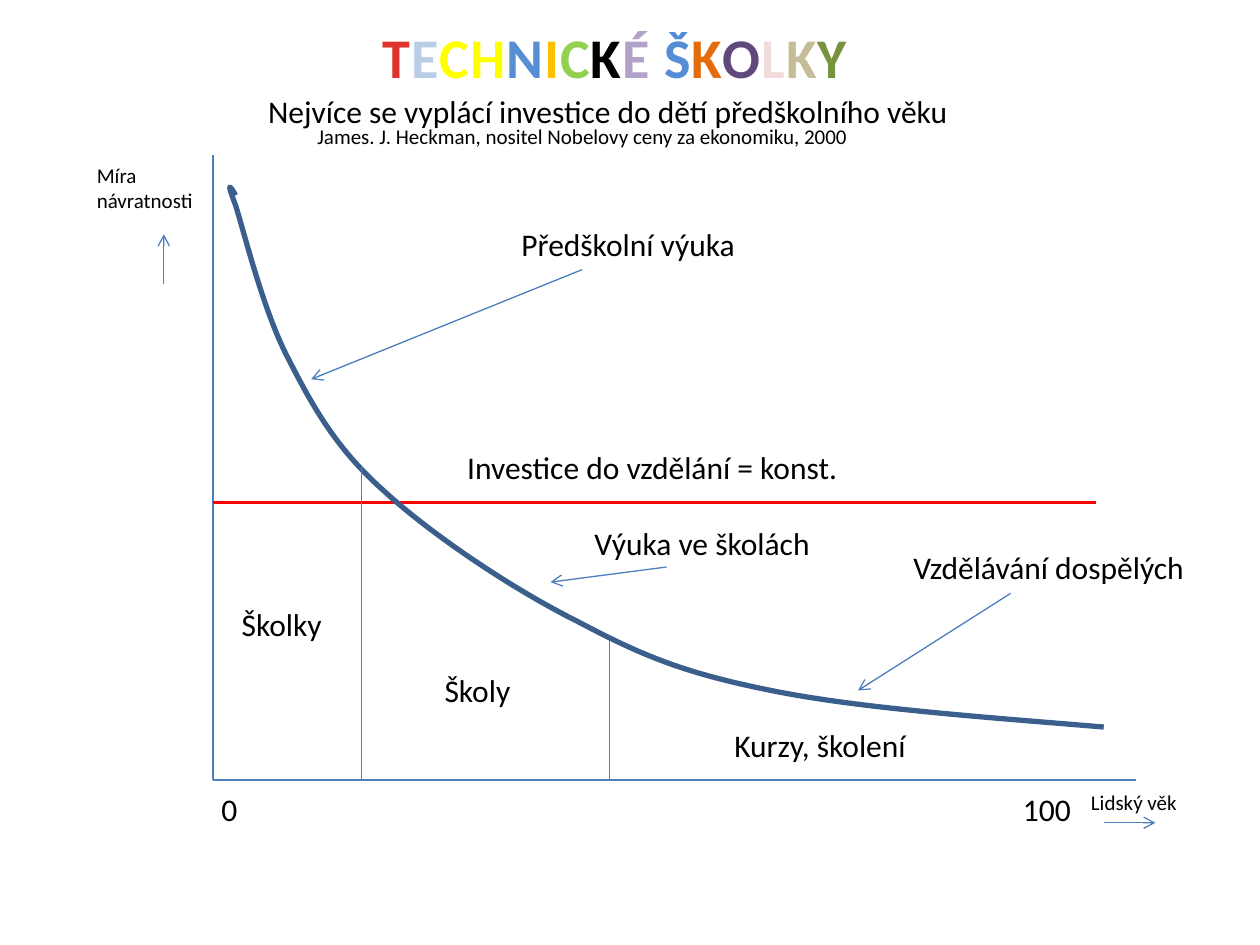
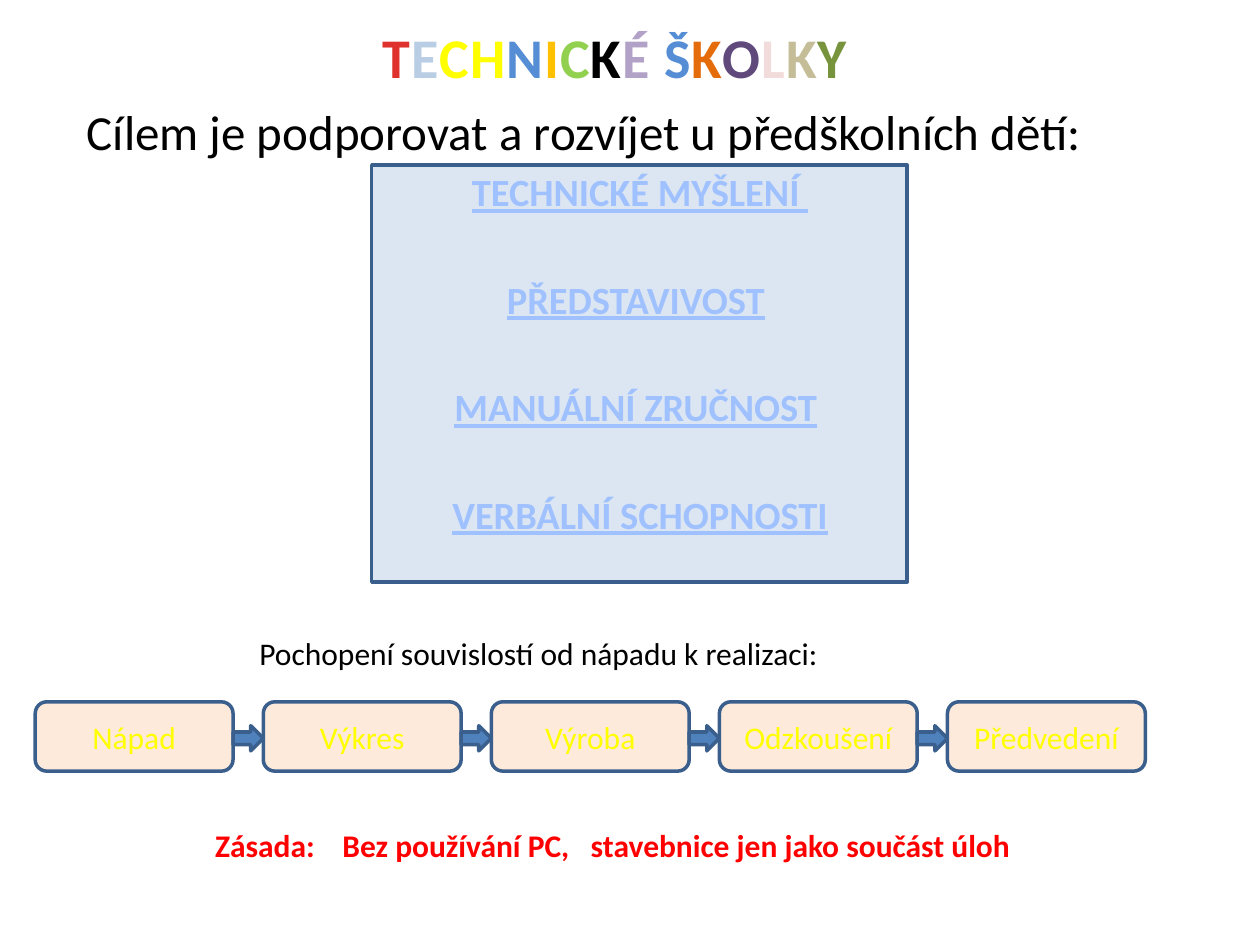
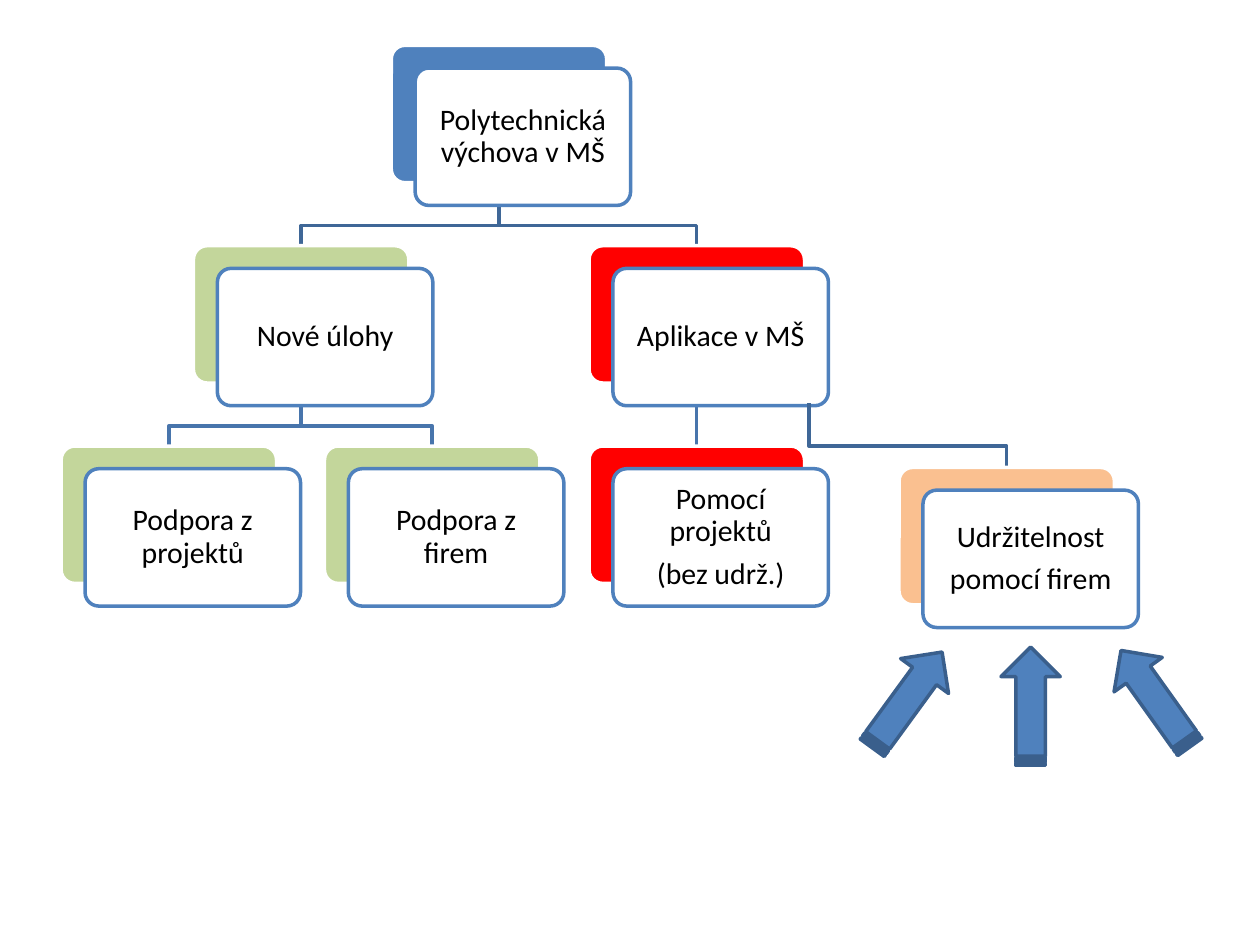
"""Builds three slides on technical kindergartens: return curve, goals and structure."""
from dataclasses import dataclass

from lxml.etree import SubElement
from pptx import Presentation
from pptx.dml.color import RGBColor
from pptx.enum.shapes import MSO_CONNECTOR, MSO_SHAPE
from pptx.enum.text import MSO_ANCHOR, MSO_AUTO_SIZE, PP_ALIGN
from pptx.oxml.ns import qn
from pptx.util import Inches, Pt


@dataclass(frozen=True)
class Theme:
    font: str = "Calibri"
    title_size: int = 32
    lead_size: int = 28
    goal_size: int = 22
    body_size: int = 18
    node_size: int = 17
    small_size: int = 12
    black: str = "000000"
    white: str = "FFFFFF"
    red: str = "FF0000"
    yellow: str = "FFFF00"
    blue: str = "4F81BD"
    dark_blue: str = "3A5F8C"
    thin_blue: str = "4B7EBC"
    link_upper: str = "3F6797"
    link_lower: str = "4875AC"
    panel: str = "DCE6F2"
    goal: str = "A0C1FF"
    step: str = "FDEADA"
    green: str = "C3D69B"
    orange: str = "FAC090"
    thin: float = 0.75
    thick: float = 2
    curve: float = 3


TITLE_RUNS = [
    ("T", "E0322D"), ("E", "B9CDE5"), ("CH", "FFFF00"), ("N", "558ED5"),
    ("I", "FFC000"), ("C", "92D050"), ("K", "000000"), ("É ", "B3A2C7"),
    ("Š", "558ED5"), ("K", "E46C0A"), ("O", "604A7B"), ("L", "F2DCDB"),
    ("K", "C4BD97"), ("Y", "77933C"),
]


class Deck:
    def __init__(self, theme):
        self.t = theme
        self.prs = Presentation()
        self.prs.slide_width = Inches(10)
        self.prs.slide_height = Inches(7.5)
        self.s = None

    def add_slide(self, titled=True):
        self.s = self.prs.slides.add_slide(self.prs.slide_layouts[5 if titled else 6])
        if titled:
            self.title()

    def title(self):
        sp = self.s.shapes.title
        sp.left, sp.top, sp.width, sp.height = map(Inches, (1.34, 0.13, 7.08, 0.64))
        tf = sp.text_frame
        tf.auto_size = MSO_AUTO_SIZE.NONE
        tf.vertical_anchor = MSO_ANCHOR.TOP
        p = tf.paragraphs[0]
        p.alignment = PP_ALIGN.CENTER
        for text, color in TITLE_RUNS:
            r = self.run(p, text, self.t.title_size, color, bold=True)
            r.font._element.set("spc", "50")

    def run(self, p, text, size, color=None, bold=False, underline=False):
        r = p.add_run()
        r.text = text
        f = r.font
        f.name, f.size, f.bold, f.underline = self.t.font, Pt(size), bold, underline
        f.color.rgb = RGBColor.from_string(color or self.t.black)
        return r

    def paragraph(self, tf, first):
        return tf.paragraphs[0] if first else tf.add_paragraph()

    def text(self, x, y, w, h, lines, size=None, color=None, bold=False, wrap=False):
        tf = self.s.shapes.add_textbox(*map(Inches, (x, y, w, h))).text_frame
        tf.word_wrap = wrap
        for i, line in enumerate(lines):
            p = self.paragraph(tf, i == 0)
            self.run(p, line, size or self.t.body_size, color, bold)
        return tf

    def tabs(self, p, stops):
        tab_list = SubElement(p._p.get_or_add_pPr(), qn("a:tabLst"))
        for stop in stops:
            SubElement(tab_list, qn("a:tab"), pos=str(Inches(stop)), algn="l")

    def shape(self, kind, x, y, w, h, fill, line, adj=None, rotation=0):
        sp = self.s.shapes.add_shape(kind, *map(Inches, (x, y, w, h)))
        sp.shadow.inherit = False
        sp.rotation = rotation
        sp.fill.solid()
        sp.fill.fore_color.rgb = RGBColor.from_string(fill)
        if adj:
            sp.adjustments[0] = adj
        self.stroke(sp, line, self.t.thick)
        return sp

    def stroke(self, sp, color, width):
        sp.line.color.rgb = RGBColor.from_string(color)
        sp.line.width = Pt(width)

    def label(self, sp, lines, size, color, spacing=None, after=None):
        tf = sp.text_frame
        tf.word_wrap = True
        tf.vertical_anchor = MSO_ANCHOR.MIDDLE
        for i, line in enumerate(lines):
            p = self.paragraph(tf, i == 0)
            p.alignment = PP_ALIGN.CENTER
            p.line_spacing = spacing
            p.space_after = after
            self.run(p, line, size, color)
        return tf

    def line(self, x1, y1, x2, y2, color=None, width=None, arrow=False):
        cn = self.s.shapes.add_connector(
            MSO_CONNECTOR.STRAIGHT, *map(Inches, (x1, y1, x2, y2)))
        self.stroke(cn, color or self.t.thin_blue, width or self.t.thin)
        if arrow:
            SubElement(cn.line._get_or_add_ln(), qn("a:tailEnd"), type="arrow")
        SubElement(cn._element.spPr, qn("a:effectLst"))

    def polyline(self, points, color, width):
        start, *rest = [(Inches(x), Inches(y)) for x, y in points]
        fb = self.s.shapes.build_freeform(*start)
        fb.add_line_segments(rest, close=False)
        sp = fb.convert_to_shape()
        sp.shadow.inherit = False
        sp.fill.background()
        self.stroke(sp, color, width)
        return sp

    def curve(self, points, color, width):
        sp = self.polyline(points, color, width)
        segments = list(sp._element.iter(qn("a:lnTo")))
        outline = segments[0].getparent()
        for i in range(0, len(segments), 3):
            bezier = SubElement(outline, qn("a:cubicBezTo"))
            for segment in segments[i:i + 3]:
                bezier.append(segment[0])
                outline.remove(segment)

    def link(self, x1, y1, x2, y2, color):
        bend = y1 + 0.34
        self.polyline([(x1, y1), (x1, bend), (x2, bend), (x2, y2)], color, self.t.thick)

    def node(self, center, top, lines, color):
        w, h, inset = 1.71, 1.09, Inches(0.1)
        left = center - w / 2
        kind = MSO_SHAPE.ROUNDED_RECTANGLE
        self.shape(kind, left, top, w, h, color, self.t.white, adj=0.1)
        card = self.shape(kind, left + 0.19, top + 0.18, w, h,
                          self.t.white, self.t.blue, adj=0.1)
        tf = self.label(card, lines, self.t.node_size, self.t.black, 0.9, Pt(6))
        tf.margin_left = tf.margin_right = tf.margin_top = tf.margin_bottom = inset


def return_curve(deck):
    t = deck.t
    deck.add_slide()
    deck.text(2.42, 0.93, 4.92, 0.3,
              ["James. J. Heckman, nositel Nobelovy ceny za ekonomiku, 2000"],
              t.small_size, wrap=True)
    left, base = 1.69, 6.19
    deck.line(left, 1.23, left, base)
    deck.line(left, base, 9.02, base)
    deck.line(left, 3.99, 8.7, 3.99, t.red, t.thick)
    deck.curve([
        (1.87, 1.55),
        (1.83, 1.48), (1.79, 1.42), (1.87, 1.63),
        (1.94, 1.85), (2.09, 2.47), (2.29, 2.85),
        (2.48, 3.22), (2.66, 3.55), (3.04, 3.89),
        (3.42, 4.24), (4.06, 4.67), (4.58, 4.93),
        (5.09, 5.2), (5.42, 5.34), (6.12, 5.48),
        (6.81, 5.62), (7.79, 5.69), (8.76, 5.77),
    ], t.dark_blue, t.curve)
    for x, top in [(2.87, 3.71), (4.84, 5.09)]:
        deck.line(x, top, x, base)
    for ends in [(4.62, 2.14, 2.47, 3.01), (5.29, 4.5, 4.37, 4.62),
                 (8.02, 4.71, 6.81, 5.48), (8.76, 6.53, 9.17, 6.53),
                 (1.3, 2.25, 1.3, 1.86)]:
        deck.line(*ends, arrow=True)
    for x, y, w, caption in [
        (4.04, 1.74, 1.91, "Předškolní výuka"),
        (4.62, 4.11, 1.93, "Výuka ve školách"),
        (7.15, 4.3, 2.38, "Vzdělávání dospělých"),
        (1.82, 4.75, 0.84, "Školky"),
        (3.43, 5.28, 0.73, "Školy"),
        (5.73, 5.71, 1.58, "Kurzy, školení"),
        (3.61, 3.51, 3.18, "Investice do vzdělání = konst."),
        (1.66, 6.22, 0.33, "0"),
        (8.02, 6.22, 0.59, "100"),
        (2.03, 0.68, 5.66, "Nejvíce se vyplácí investice do dětí předškolního věku"),
    ]:
        deck.text(x, y, w, 0.4, [caption])
    deck.text(8.56, 6.22, 0.89, 0.3, ["Lidský věk"], t.small_size)
    deck.text(0.67, 1.24, 0.97, 0.5, ["Míra", "návratnosti"], t.small_size)


def goals(deck):
    t = deck.t
    deck.add_slide()
    deck.shape(MSO_SHAPE.RECTANGLE, 2.95, 1.31, 4.25, 3.31, t.panel, t.dark_blue)
    tf = deck.text(0.59, 0.76, 8.98, 3.86,
                   ["Cílem je podporovat a rozvíjet u předškolních dětí:"],
                   t.lead_size, wrap=True)
    tf.paragraphs[0].space_before = Pt(5.6)
    for i, (goal, tail) in enumerate([("TECHNICKÉ MYŠLENÍ ", ""), ("PŘEDSTAVIVOST", " "),
                                      ("MANUÁLNÍ ZRUČNOST", " "),
                                      ("VERBÁLNÍ SCHOPNOSTI", "")]):
        p = tf.add_paragraph()
        p.alignment = PP_ALIGN.CENTER
        p.space_before = Pt(35 if i else 4.4)
        deck.run(p, goal, t.goal_size, t.goal, bold=True, underline=True)
        if tail:
            deck.run(p, tail, t.goal_size, t.goal, bold=True)
    deck.text(1.96, 4.98, 4.69, 0.4, ["Pochopení souvislostí od nápadu k realizaci:"])

    steps = ["Nápad", "Výkres", "Výroba", "Odzkoušení", "Předvedení"]
    width, gap = 1.57, 0.24
    lefts = [0.28 + i * (width + gap) for i in range(len(steps))]
    for x, step in zip(lefts, steps):
        sp = deck.shape(MSO_SHAPE.ROUNDED_RECTANGLE, x, 5.57, width, 0.55,
                        t.step, t.dark_blue)
        deck.label(sp, [step], t.body_size, t.yellow)
    for x in lefts[:-1]:
        deck.shape(MSO_SHAPE.RIGHT_ARROW, x + width, 5.76, gap, 0.2, t.blue, t.dark_blue)
    tf = deck.text(1.61, 6.51, 6.52, 0.4,
                   ["Zásada:\tBez používání PC,\tstavebnice jen jako součást úloh"],
                   color=t.red, bold=True, wrap=True)
    deck.tabs(tf.paragraphs[0], [1.01, 2.98])


def structure(deck):
    t = deck.t
    deck.add_slide(titled=False)
    tops = [0.36 + 1.59 * i for i in range(3)]
    bottoms = [top + 1.09 for top in tops]
    root, tasks, use, projects, firms, lasting = 3.96, 2.39, 5.53, 1.34, 3.43, 7.99
    deck.polyline([(use, bottoms[1]), (use, tops[2])], t.link_lower, t.thick)
    for level, parent, child, color in [
        (0, root, use, t.link_upper), (1, tasks, firms, t.link_lower),
        (1, tasks, projects, t.link_lower), (0, root, tasks, t.link_upper),
    ]:
        deck.link(parent, bottoms[level], child, tops[level + 1], color)
    for center, top, lines, color in [
        (root, tops[0], ["Polytechnická výchova v MŠ"], t.blue),
        (tasks, tops[1], ["Nové úlohy"], t.green),
        (projects, tops[2], ["Podpora z projektů"], t.green),
        (firms, tops[2], ["Podpora z firem"], t.green),
        (use, tops[1], ["Aplikace v MŠ"], t.red),
        (use, tops[2], ["Pomocí projektů", "(bez udrž.)"], t.red),
    ]:
        deck.node(center, top, lines, color)
    deck.link(6.42, 3.2, lasting, 3.7, t.link_upper)
    deck.node(lasting, 3.71, ["Udržitelnost", "pomocí firem"], t.orange)
    for x, y, angle in [(6.73, 5.32, 306.1), (8.7, 5.31, 234.5), (7.71, 5.37, 270)]:
        deck.shape(MSO_SHAPE.STRIPED_RIGHT_ARROW, x, y, 0.94, 0.47,
                   t.blue, t.dark_blue, rotation=angle)


def main():
    deck = Deck(Theme())
    return_curve(deck)
    goals(deck)
    structure(deck)
    deck.prs.save("out.pptx")


if __name__ == "__main__":
    main()
